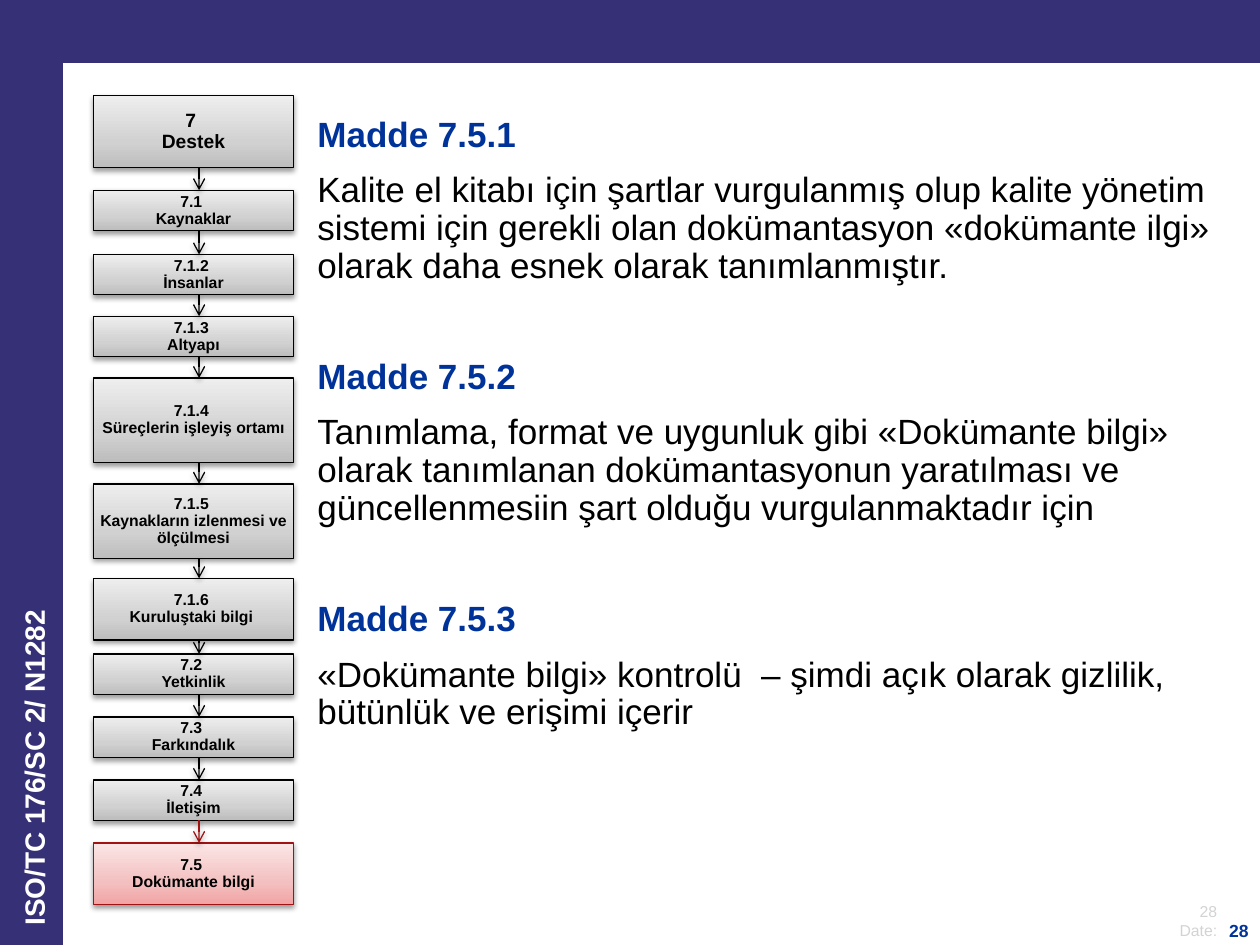
from dataclasses import dataclass
from itertools import pairwise

from pptx import Presentation
from pptx.dml.color import RGBColor
from pptx.enum.shapes import MSO_CONNECTOR, MSO_SHAPE
from pptx.enum.text import MSO_ANCHOR, PP_ALIGN
from pptx.oxml import parse_xml
from pptx.oxml.ns import nsdecls, qn
from pptx.util import Inches, Pt

COLORS = {
    "band": "363177", "heading": "003399", "white": "FFFFFF",
    "black": "000000", "muted": "D3D3D3", "red": "A11212",
}
GRADIENTS = {
    "black": {0: "BDBDBD", 35: "D1D1D1", 100: "EEEEEE"},
    "red": {0: "F1A3A3", 35: "F3BFBF", 100: "FCE6E6"},
}
STEP_LEFT, STEP_WIDTH, ARROW_X = 0.74, 1.59, 1.58


@dataclass
class Step:
    top: float
    height: float
    clause: str
    title: str
    size: int = 9
    color: str = "black"

    @property
    def bottom(self) -> float:
        return self.top + self.height


@dataclass
class Section:
    heading: str
    body: str


STEPS = [
    Step(0.76, 0.57, "7 ", "Destek", size=11),
    Step(1.51, 0.32, "7.1 ", "Kaynaklar"),
    Step(2.02, 0.32, "7.1.2 ", "İnsanlar"),
    Step(2.51, 0.32, "7.1.3 ", "Altyapı"),
    Step(3.00, 0.67, "7.1.4 ", "Süreçlerin işleyiş ortamı"),
    Step(3.84, 0.59, "7.1.5 ", "Kaynakların izlenmesi ve ölçülmesi"),
    Step(4.59, 0.49, "7.1.6 ", "Kuruluştaki bilgi "),
    Step(5.19, 0.32, "7.2 ", "Yetkinlik"),
    Step(5.69, 0.32, "7.3 ", "Farkındalık"),
    Step(6.19, 0.32, "7.4 ", "İletişim"),
    Step(6.69, 0.49, "7.5 ", "Dokümante bilgi", color="red"),
]
SECTIONS = [
    Section("Madde 7.5.1",
            "Kalite el kitabı için şartlar vurgulanmış olup kalite yönetim sistemi için "
            "gerekli olan dokümantasyon «dokümante ilgi» olarak daha esnek olarak "
            "tanımlanmıştır."),
    Section("Madde 7.5.2",
            "Tanımlama, format ve uygunluk gibi «Dokümante bilgi» olarak tanımlanan "
            "dokümantasyonun yaratılması ve güncellenmesiin şart olduğu "
            "vurgulanmaktadır için"),
    Section("Madde 7.5.3",
            "«Dokümante bilgi» kontrolü  – şimdi açık olarak gizlilik, bütünlük ve "
            "erişimi içerir"),
]


def rgb(name: str) -> RGBColor:
    return RGBColor.from_string(COLORS[name])


def set_insets(frame, side: float, vertical: float) -> None:
    frame.margin_left = frame.margin_right = Inches(side)
    frame.margin_top = frame.margin_bottom = Inches(vertical)


def add_paragraph(frame, text: str, size: int, color: str, bold: bool = False,
                  align=PP_ALIGN.LEFT, before: int = 0, spacing: float = 0.9) -> None:
    """Write into the first paragraph while it is empty, then append."""
    first = frame.paragraphs[0]
    paragraph = frame.add_paragraph() if first.runs else first
    paragraph.alignment = align
    paragraph.line_spacing = spacing
    paragraph.space_before = Pt(before)
    span = paragraph.add_run()
    span.text = text
    span.font.name = "Arial"
    span.font.size = Pt(size)
    span.font.bold = bold
    span.font.color.rgb = rgb(color)


def add_text_box(page, left: float, top: float, width: float, height: float,
                 wrap: bool = True, anchor=MSO_ANCHOR.TOP):
    box = page.shapes.add_textbox(Inches(left), Inches(top), Inches(width), Inches(height))
    frame = box.text_frame
    frame.word_wrap = wrap
    frame.vertical_anchor = anchor
    set_insets(frame, 0.09, 0.04)
    return box


def add_band(page, width: float, height: float) -> None:
    band = page.shapes.add_shape(MSO_SHAPE.RECTANGLE, 0, 0, Inches(width), Inches(height))
    band.shadow.inherit = False
    band.fill.solid()
    band.fill.fore_color.rgb = rgb("band")
    band.line.fill.background()


def soft_shadow():
    return parse_xml(
        f'<a:effectLst {nsdecls("a")}><a:outerShdw blurRad="{Pt(3.1)}" dist="{Pt(1.6)}" '
        'dir="5400000" rotWithShape="0"><a:srgbClr val="000000"><a:alpha val="38000"/>'
        '</a:srgbClr></a:outerShdw></a:effectLst>')


def gradient_fill(stops: dict[int, str]):
    marks = "".join(f'<a:gs pos="{position * 1000}"><a:srgbClr val="{color}"/></a:gs>'
                    for position, color in stops.items())
    return parse_xml(f'<a:gradFill {nsdecls("a")} rotWithShape="1"><a:gsLst>{marks}</a:gsLst>'
                     '<a:lin ang="16200000" scaled="0"/></a:gradFill>')


def add_step(page, step: Step) -> None:
    box = page.shapes.add_shape(MSO_SHAPE.RECTANGLE, Inches(STEP_LEFT), Inches(step.top),
                                Inches(STEP_WIDTH), Inches(step.height))
    box.line.color.rgb = rgb(step.color)
    box.line.width = Pt(0.75)
    properties = box._element.spPr
    properties.find(qn("a:prstGeom")).addnext(gradient_fill(GRADIENTS[step.color]))
    properties.append(soft_shadow())
    frame = box.text_frame
    frame.word_wrap = True
    frame.vertical_anchor = MSO_ANCHOR.MIDDLE
    set_insets(frame, 0.05, 0.05)
    for text in (step.clause, step.title):
        add_paragraph(frame, text, step.size, "black", True, PP_ALIGN.CENTER)


def add_arrow(page, start: Step, end: Step) -> None:
    arrow = page.shapes.add_connector(MSO_CONNECTOR.STRAIGHT, Inches(ARROW_X),
                                      Inches(start.bottom), Inches(ARROW_X), Inches(end.top))
    arrow.line.color.rgb = rgb(end.color)
    arrow.line.width = Pt(0.75)
    properties = arrow._element.spPr
    properties.find(qn("a:ln")).append(parse_xml(f'<a:tailEnd {nsdecls("a")} type="arrow"/>'))
    properties.append(soft_shadow())


def add_sections(page) -> None:
    frame = add_text_box(page, 2.42, 0.42, 7.42, 5.91).text_frame
    set_insets(frame, 0.1, 0.05)
    frame.margin_top = Inches(0.51)
    for index, section in enumerate(SECTIONS):
        add_paragraph(frame, section.heading, 20, "heading", True, before=42 if index else 0)
        add_paragraph(frame, section.body, 20, "black", before=10)


def main() -> None:
    deck = Presentation()
    deck.slide_width, deck.slide_height = Inches(10), Inches(7.5)
    page = deck.slides.add_slide(deck.slide_layouts[6])

    # Frame bands, side label and footer
    add_band(page, 10, 0.5)
    footer = add_text_box(page, 9.24, 7.11, 0.51, 0.39, False, MSO_ANCHOR.BOTTOM)
    for text in ("28", "Date: "):
        add_paragraph(footer.text_frame, text, 9, "muted", align=PP_ALIGN.RIGHT, spacing=1.0)
    add_band(page, 0.5, 7.5)
    label = add_text_box(page, -1.53, 5.32, 3.77, 0.46)
    label.rotation = 270
    add_paragraph(label.text_frame, "ISO/TC 176/SC 2/ N1282", 16, "white", True)
    number = add_text_box(page, 9.65, 7.25, 0.35, 0.26, False, MSO_ANCHOR.BOTTOM)
    add_paragraph(number.text_frame, "28", 10, "heading", True, PP_ALIGN.RIGHT, spacing=1.0)

    # Clause explanations
    add_sections(page)

    # Clause chain
    for step in STEPS:
        add_step(page, step)
    for start, end in pairwise(STEPS):
        add_arrow(page, start, end)

    deck.save("out.pptx")


if __name__ == "__main__":
    main()
